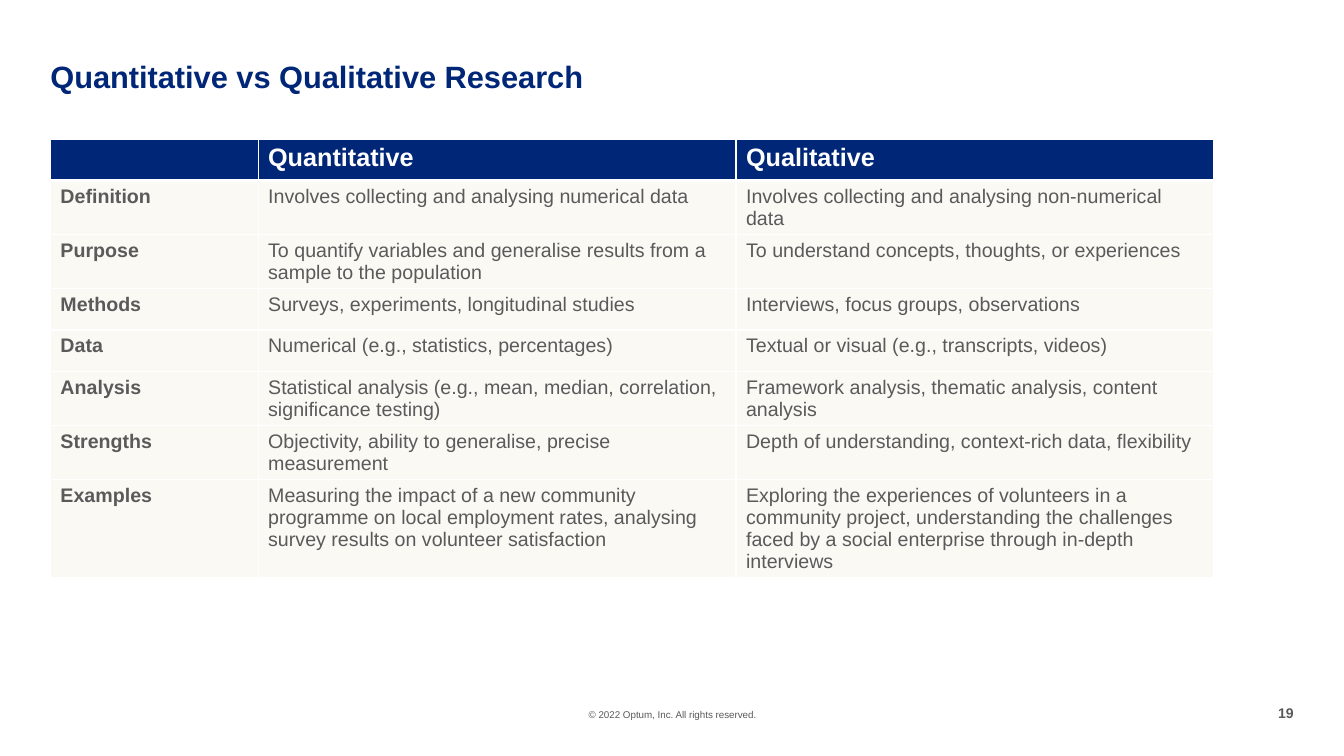
"""Build a slide that compares quantitative and qualitative research in a table."""
from dataclasses import dataclass

from lxml import etree
from pptx import Presentation
from pptx.dml.color import RGBColor
from pptx.enum.text import MSO_ANCHOR, MSO_AUTO_SIZE, PP_ALIGN
from pptx.oxml.ns import qn
from pptx.slide import Slide
from pptx.table import _Cell
from pptx.text.text import TextFrame, _Paragraph
from pptx.util import Emu, Pt

LEFT, CENTER, RIGHT = PP_ALIGN.LEFT, PP_ALIGN.CENTER, PP_ALIGN.RIGHT
TOP = MSO_ANCHOR.TOP
NO_AUTOFIT = MSO_AUTO_SIZE.NONE

NAVY = RGBColor(0x00, 0x26, 0x77)
GREY = RGBColor(0x5A, 0x5A, 0x5A)
CREAM = RGBColor(0xFB, 0xF9, 0xF4)
WHITE = RGBColor(0xFF, 0xFF, 0xFF)

FONT = "Arial"
EMU_PER_PX = 9144
THIN, THICK = Pt(1), Pt(3)

TITLE = "Quantitative vs Qualitative Research"
TITLE_BOX = (50, 61, 1050, 33)
TABLE_LEFT, TABLE_TOP = 50, 138
COLUMN_WIDTHS = (206, 474, 474)
ROW_HEIGHT = 41


@dataclass(frozen=True)
class TextStyle:
    """Size, colour and weight of a run."""

    size: int
    color: RGBColor
    bold: bool = False


@dataclass(frozen=True)
class FooterItem:
    """A small text at the foot of the slide."""

    text: str
    box: tuple[int, int, int, int]
    style: TextStyle
    alignment: PP_ALIGN


TITLE_STYLE = TextStyle(22, NAVY, True)
HEADER_STYLE = TextStyle(18, WHITE, True)
LABEL_STYLE = TextStyle(14, GREY, True)
BODY_STYLE = TextStyle(14, GREY)

FOOTER_ITEMS = (
    FooterItem("© 2022 Optum, Inc. All rights reserved.", (514, 703, 306, 12),
               TextStyle(7, GREY), CENTER),
    FooterItem("19", (1266, 699, 17, 17), TextStyle(10, GREY, True), RIGHT),
)

ROWS = (
    ("", "Quantitative", "Qualitative"),
    ("Definition", "Involves collecting and analysing numerical data",
     "Involves collecting and analysing non-numerical data"),
    ("Purpose",
     "To quantify variables and generalise results from a sample to the population",
     "To understand concepts, thoughts, or experiences"),
    ("Methods", "Surveys, experiments, longitudinal studies",
     "Interviews, focus groups, observations"),
    ("Data", "Numerical (e.g., statistics, percentages)",
     "Textual or visual (e.g., transcripts, videos)"),
    ("Analysis",
     "Statistical analysis (e.g., mean, median, correlation, significance testing)",
     "Framework analysis, thematic analysis, content analysis"),
    ("Strengths", "Objectivity, ability to generalise, precise measurement",
     "Depth of understanding, context-rich data, flexibility"),
    ("Examples",
     "Measuring the impact of a new community programme on local employment rates, "
     "analysing survey results on volunteer satisfaction",
     "Exploring the experiences of volunteers in a community project, understanding "
     "the challenges faced by a social enterprise through in-depth interviews"),
)


def px(length: int) -> Emu:
    """Turn whole px into EMU."""
    return Emu(length * EMU_PER_PX)


def add_run(paragraph: _Paragraph, text: str, style: TextStyle) -> None:
    """Add one styled run."""
    run = paragraph.add_run()
    run.text = text
    run.font.name = FONT
    run.font.size = Pt(style.size)
    run.font.bold = style.bold
    run.font.color.rgb = style.color


def clear_frame(frame: TextFrame) -> None:
    """Remove the insets of a text frame and wrap it from the top."""
    frame.margin_left = frame.margin_top = frame.margin_right = frame.margin_bottom = 0
    frame.word_wrap = True
    frame.auto_size = NO_AUTOFIT
    frame.vertical_anchor = TOP


def fill_title(slide: Slide) -> None:
    """Place and write the title."""
    title = slide.shapes.title
    title.left, title.top, title.width, title.height = map(px, TITLE_BOX)
    clear_frame(title.text_frame)
    paragraph = title.text_frame.paragraphs[0]
    paragraph.alignment = LEFT
    paragraph.line_spacing = 0.9
    add_run(paragraph, TITLE, TITLE_STYLE)


def add_footer_item(slide: Slide, item: FooterItem) -> None:
    """Add one footer text."""
    frame = slide.shapes.add_textbox(*map(px, item.box)).text_frame
    clear_frame(frame)
    paragraph = frame.paragraphs[0]
    paragraph.alignment = item.alignment
    add_run(paragraph, item.text, item.style)


def set_borders(cell: _Cell, top: int, bottom: int) -> None:
    """Give a cell white borders, thin at its sides."""
    properties = cell._tc.get_or_add_tcPr()
    for tag, width in (("a:lnL", THIN), ("a:lnR", THIN), ("a:lnT", top), ("a:lnB", bottom)):
        line = etree.SubElement(properties, qn(tag), w=str(int(width)))
        fill = etree.SubElement(line, qn("a:solidFill"))
        etree.SubElement(fill, qn("a:srgbClr"), val=str(WHITE))


def add_comparison_table(slide: Slide) -> None:
    """Add the table with its header row and label column."""
    table = slide.shapes.add_table(
        len(ROWS), len(COLUMN_WIDTHS), px(TABLE_LEFT), px(TABLE_TOP),
        px(sum(COLUMN_WIDTHS)), px(ROW_HEIGHT * len(ROWS))).table
    table.horz_banding = False
    for column, width in zip(table.columns, COLUMN_WIDTHS):
        column.width = px(width)
    for row_index, texts in enumerate(ROWS):
        table.rows[row_index].height = px(ROW_HEIGHT)
        is_header = row_index == 0
        for column_index, text in enumerate(texts):
            cell = table.cell(row_index, column_index)
            set_borders(cell, THICK if row_index == 1 else THIN,
                        THICK if is_header else THIN)
            cell.fill.solid()
            cell.fill.fore_color.rgb = NAVY if is_header else CREAM
            label_or_body = LABEL_STYLE if column_index == 0 else BODY_STYLE
            if text:
                add_run(cell.text_frame.paragraphs[0], text,
                        HEADER_STYLE if is_header else label_or_body)


def main() -> None:
    """Build and save the presentation."""
    presentation = Presentation()
    presentation.slide_width, presentation.slide_height = px(1333), px(750)
    slide = presentation.slides.add_slide(presentation.slide_layouts[5])
    fill_title(slide)
    add_comparison_table(slide)
    for item in FOOTER_ITEMS:
        add_footer_item(slide, item)
    presentation.save("out.pptx")


if __name__ == "__main__":
    main()
